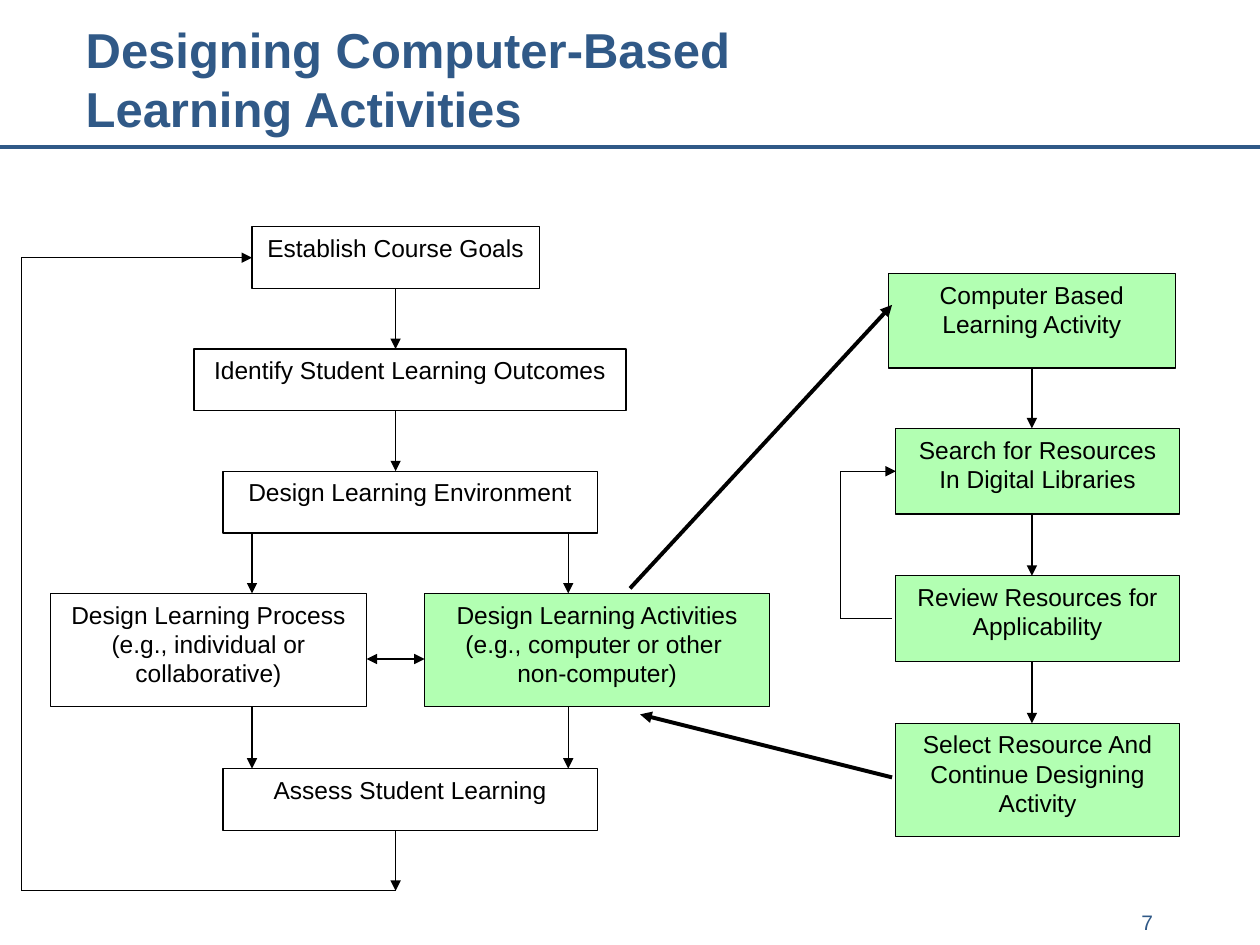
from pptx import Presentation
from pptx import util as u
from pptx.dml.color import RGBColor
from pptx.enum import shapes, text
from pptx.oxml import ns, xmlchemy

COLOR = {"blue": "305987", "ink": "000000", "white": "FFFFFF", "green": "66FF66"}
# Column axes of the flow chart, in inches
COL = {"loop": 0.17, "west": 2, "mid": 3.14, "east": 4.51, "back": 6.67,
       "gate": 7.08, "side": 8.19}
LOW, TALL, PAIR = 0.49, 0.9, 0.68  # box heights by number of lines


def main_row(n):
    return 1.8 + 0.97 * n


def side_row(n):
    return 2.23 + 1.17 * n


def rgb(name):
    return RGBColor.from_string(COLOR[name])


def style(frame, size, color, align, bold=False):
    form = {"size": u.Pt(size), "bold": bold, "name": "Arial"}
    for para in frame.paragraphs:
        para.alignment = align
        for run in para.runs:
            for key, value in form.items():
                setattr(run.font, key, value)
            run.font.color.rgb = rgb(color)


def place(shape, *spot):
    for key, value in zip(("left", "top", "width", "height"), spot):
        setattr(shape, key, u.Inches(value))


def add_box(group, label, left, top, wide, high, fill="white"):
    box = group.shapes.add_shape(shapes.MSO_SHAPE.RECTANGLE,
                                 *map(u.Inches, (left, top, wide, high)))
    box.shadow.inherit = False
    box.fill.solid()
    box.fill.fore_color.rgb = rgb(fill)
    if fill == "green":  # half transparent
        tint = box.element.spPr.find(".//" + ns.qn("a:srgbClr"))
        xmlchemy.OxmlElement("a:alpha")
        alpha = xmlchemy.OxmlElement("a:alpha")
        alpha.set("val", "50000")
        tint.append(alpha)
    box.line.color.rgb = rgb("ink")
    box.line.width = u.Pt(0.75)
    frame = box.text_frame
    frame.word_wrap = True
    frame.vertical_anchor = text.MSO_ANCHOR.TOP
    frame.text = label
    style(frame, 14, "ink", text.PP_ALIGN.CENTER)


def add_line(owner, start, end, ends=("tailEnd",), width=0.75, color="ink"):
    line = owner.shapes.add_connector(shapes.MSO_CONNECTOR.STRAIGHT,
                                      *map(u.Inches, (*start, *end)))
    line.line.color.rgb = rgb(color)
    line.line.width = u.Pt(width)
    for end_tag in ends:
        tip = xmlchemy.OxmlElement("a:" + end_tag)
        tip.set("type", "triangle")
        line.line._get_or_add_ln().append(tip)
    line.element.spPr.append(xmlchemy.OxmlElement("a:effectLst"))


def add_drop(group, col, top, end):
    add_line(group, (COL[col], top), (COL[col], end))


def add_path(group, *points):
    """Chain of lines with an arrowhead on the last one."""
    legs = list(zip(points, points[1:]))
    for leg in legs:
        add_line(group, *leg, ends=("tailEnd",) if leg is legs[-1] else ())


def add_frame(slide):
    add_line(slide, (0, 1.17), (10, 1.17), (), 2.25, "blue")
    page = slide.shapes.add_textbox(0, 0, 0, 0)
    place(page, 6.83, 7.17, 2.42, 0.25)
    page.text_frame.word_wrap = True
    page.text_frame.text = "7"
    style(page.text_frame, 12, "blue", text.PP_ALIGN.RIGHT)

    title = slide.shapes.title
    place(title, 0.58, 0.25, 6.75, 0.75)
    frame = title.text_frame
    frame.text = "Designing Computer-Based Learning Activities"
    frame.auto_size = text.MSO_AUTO_SIZE.NONE
    frame.vertical_anchor = text.MSO_ANCHOR.MIDDLE
    style(frame, 28, "blue", text.PP_ALIGN.LEFT, True)


def add_course(slide):
    group = slide.shapes.add_group_shape()
    rows = [main_row(n) for n in range(4)]
    last, foot = 6.1, 7.07
    # Boxes
    for label, left, top, wide in (
            ("Establish Course Goals", 2, rows[0], 2.28),
            ("Identify Student Learning Outcomes", 1.54, rows[1], 3.43),
            ("Design Learning Environment", 1.77, rows[2], 2.97),
            ("Assess Student Learning", 1.77, last, 2.97)):
        add_box(group, label, left, top, wide, LOW)
    add_box(group, "Design Learning Process\n(e.g., individual or collaborative)",
            0.4, rows[3], 2.51, TALL)
    add_box(group, "Design Learning Activities\n(e.g., computer or other \nnon-computer)",
            3.37, rows[3], 2.74, TALL, "green")
    # Arrows down
    for n in (0, 1):
        add_drop(group, "mid", rows[n] + LOW, rows[n + 1])
    for col in ("west", "east"):
        add_drop(group, col, rows[2] + LOW, rows[3])
        add_drop(group, col, rows[3] + TALL, last)
    add_drop(group, "mid", last + LOW, foot)
    # Two-way arrow and loop back to the goals
    add_line(group, (2.91, 5.23), (3.37, 5.23), ("headEnd", "tailEnd"))
    goal = rows[0] + LOW / 2
    add_path(group, (COL["mid"], foot), (COL["loop"], foot),
             (COL["loop"], goal), (COL["west"], goal))


def add_search(slide):
    group = slide.shapes.add_group_shape()
    rows = [side_row(n) for n in range(4)]
    # Boxes
    add_box(group, "Computer Based\nLearning Activity", 7.05, 2.17, 2.28, 0.75, "green")
    for label, top, high in (
            ("Search for Resources\nIn Digital Libraries", rows[1], PAIR),
            ("Review Resources for\nApplicability", rows[2], PAIR),
            ("Select Resource And Continue Designing\nActivity", rows[3], TALL)):
        add_box(group, label, 7.11, top, 2.25, high, "green")
    # Arrows down and loop back to the search
    for n in range(3):
        add_drop(group, "side", rows[n] + (PAIR if n else 0.69), rows[n + 1])
    low, high = rows[2] + PAIR / 2, rows[1] + PAIR / 2
    add_path(group, (COL["gate"], low), (COL["back"], low),
             (COL["back"], high), (7.11, high))


def main():
    deck = Presentation()
    deck.slide_width, deck.slide_height = u.Inches(10), u.Inches(7.5)
    slide = deck.slides.add_slide(deck.slide_layouts[5])
    add_frame(slide)
    add_course(slide)
    add_search(slide)
    # Heavy arrows between the two flows
    add_line(slide, (5, 4.67), (COL["gate"], 2.42), width=2.25)
    add_line(slide, (COL["gate"], 6.17), (5.08, 5.67), width=2.25)
    deck.save("out.pptx")


if __name__ == "__main__":
    main()
